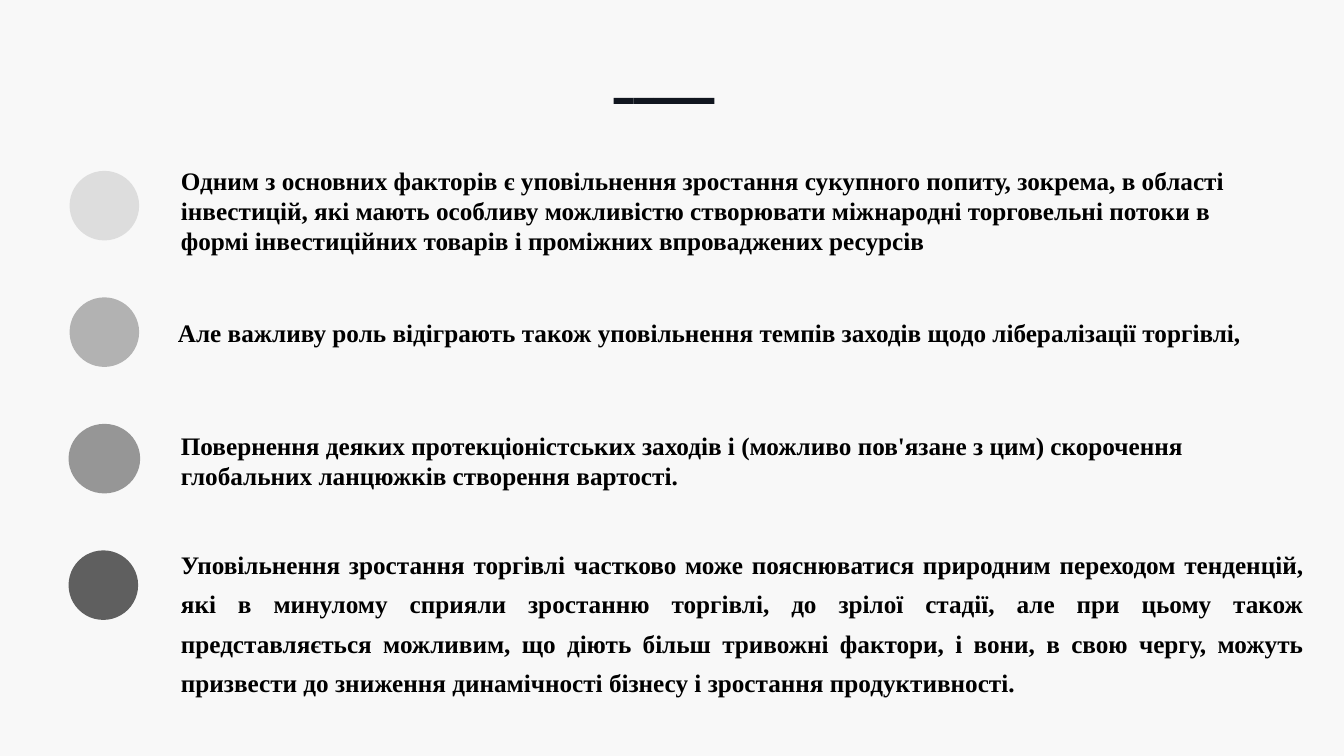
"""Build a slide of four reasons for slower trade growth, each marked by a grey circle."""
from pptx import Presentation
from pptx import util as u
from pptx.dml.color import RGBColor
from pptx.enum import shapes, text

PX = 9144
SLIDE_W, SLIDE_H = 2666, 1500
FONT, FONT_SIZE = "Times New Roman", u.Pt(36)
BACKGROUND = RGBColor(0xF8, 0xF8, 0xF8)
DASH_COLOR = RGBColor(0x11, 0x16, 0x1F)
TEXT_COLOR = RGBColor(0, 0, 0)

CIRCLE_TOP, CIRCLE_PITCH, CIRCLE_H = 339, 251, 138
DASH_LEFT, DASH_TOP, DASH_W, DASH_H, DASH_COUNT = 1217, 194, 40, 12, 5

REASONS = [
    dict(
        words="Одним з основних факторів є уповільнення зростання сукупного попиту, зокрема, "
              "в області інвестицій, які мають особливу можливістю створювати міжнародні "
              "торговельні потоки в формі інвестиційних товарів і проміжних впроваджених ресурсів",
        box=(349, 323, 2197, 192), circle=(138, 138), grey=RGBColor(0xDD, 0xDD, 0xDD)),
    dict(
        words="Але важливу роль відіграють також уповільнення темпів заходів щодо "
              "лібералізації торгівлі,",
        box=(343, 624, 2147, 71), circle=(138, 138), grey=RGBColor(0xB2, 0xB2, 0xB2)),
    dict(
        words="Повернення деяких протекціоністських заходів і (можливо пов'язане з цим) "
              "скорочення глобальних ланцюжків створення вартості.",
        box=(349, 848, 2247, 131), circle=(136, 142), grey=RGBColor(0x96, 0x96, 0x96)),
    dict(
        words="Уповільнення зростання торгівлі частково може пояснюватися природним переходом "
              "тенденцій, які в минулому сприяли зростанню торгівлі, до зрілої стадії, але при "
              "цьому також представляється можливим, що діють більш тривожні фактори, і вони, "
              "в свою чергу, можуть призвести до зниження динамічності бізнесу і зростання "
              "продуктивності.",
        box=(349, 1067, 2247, 317), circle=(136, 138), grey=RGBColor(0x5F, 0x5F, 0x5F),
        justified=True),
]


def emu(*lengths):
    return [u.Emu(length * PX) for length in lengths]


def add_filled(parent, preset, place, color):
    shape = parent.add_shape(preset, *emu(*place))
    shape.shadow.inherit = False
    shape.fill.solid()
    shape.fill.fore_color.rgb = color
    shape.line.fill.background()


def add_reason(parent, words, box, justified=False):
    frame = parent.add_textbox(*emu(*box)).text_frame
    frame.word_wrap = True
    frame.auto_size = text.MSO_AUTO_SIZE.SHAPE_TO_FIT_TEXT
    paragraph = frame.paragraphs[0]
    if justified:
        paragraph.alignment = text.PP_ALIGN.JUSTIFY
        paragraph.line_spacing = 1.3
        paragraph.space_after = u.Pt(8)
    run = paragraph.add_run()
    run.text = words
    run.font.name, run.font.size, run.font.bold = FONT, FONT_SIZE, True
    run.font.color.rgb = TEXT_COLOR


def main():
    deck = Presentation()
    deck.slide_width, deck.slide_height = emu(SLIDE_W, SLIDE_H)
    slide = deck.slides.add_slide(deck.slide_layouts[6])
    slide.background.fill.solid()
    slide.background.fill.fore_color.rgb = BACKGROUND

    for row, reason in enumerate(REASONS):
        left, width = reason["circle"]
        place = (left, CIRCLE_TOP + row * CIRCLE_PITCH, width, CIRCLE_H)
        add_filled(slide.shapes, shapes.MSO_SHAPE.OVAL, place, reason["grey"])

    dashes = slide.shapes.add_group_shape().shapes
    for column in range(DASH_COUNT):
        place = (DASH_LEFT + column * DASH_W, DASH_TOP, DASH_W, DASH_H)
        add_filled(dashes, shapes.MSO_SHAPE.RECTANGLE, place, DASH_COLOR)

    for reason in REASONS:
        add_reason(slide.shapes, reason["words"], reason["box"], reason.get("justified", False))

    deck.save("out.pptx")


if __name__ == "__main__":
    main()
